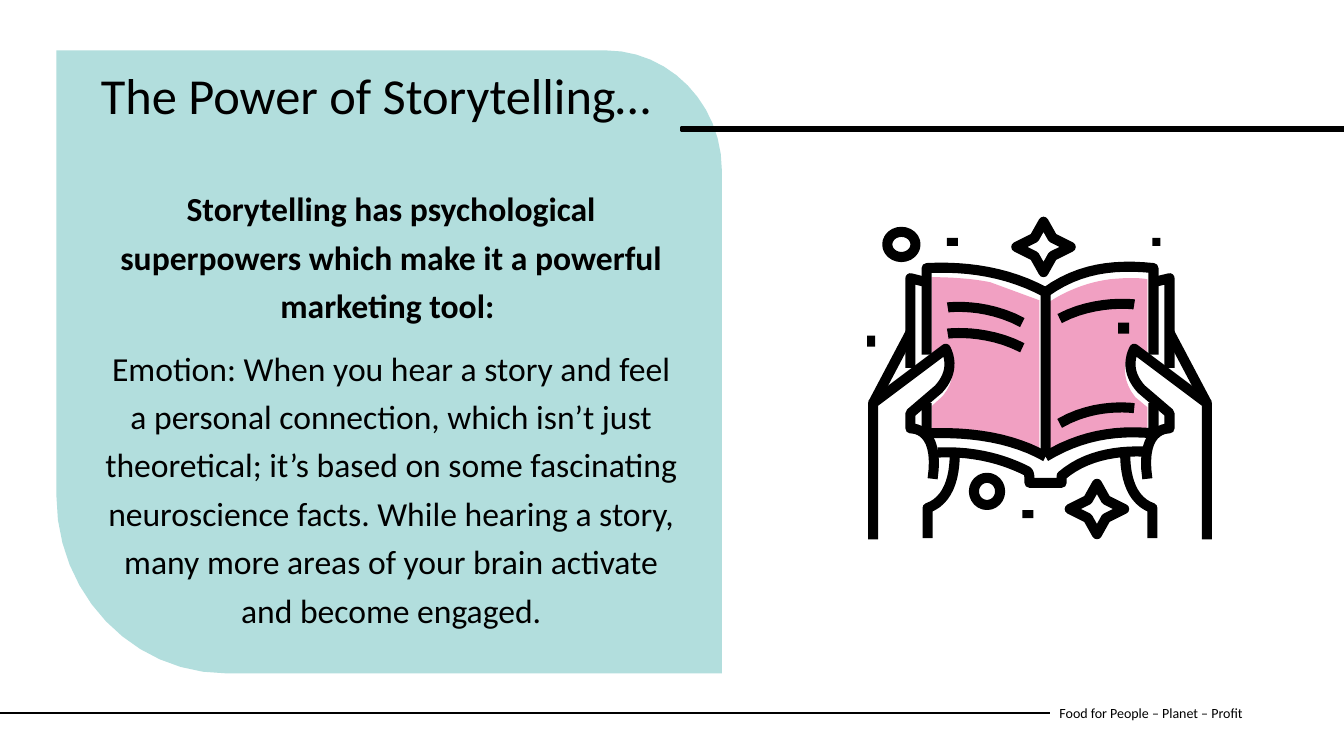
from collections import namedtuple
from dataclasses import dataclass

from lxml.etree import SubElement
from pptx import Presentation
from pptx.dml.color import RGBColor
from pptx.enum.shapes import MSO_CONNECTOR, MSO_SHAPE
from pptx.enum.text import MSO_ANCHOR, MSO_AUTO_SIZE, PP_ALIGN
from pptx.oxml.ns import qn
from pptx.util import Inches, Pt

Box = namedtuple("Box", "left top width height")


@dataclass(frozen=True)
class Theme:
    ink: RGBColor = RGBColor(0x00, 0x00, 0x00)
    panel: RGBColor = RGBColor(0xB2, 0xDE, 0xDD)
    page: RGBColor = RGBColor(0xF1, 0xA0, 0xC2)
    font: str = "Calibri"
    title_pt: int = 36
    body_pt: int = 24
    footer_pt: int = 10
    stroke_pt: float = 7.2


THEME = Theme()

TITLE = "The Power of Storytelling…"
LEAD = "Storytelling has psychological superpowers which make it a powerful marketing tool: "
EMOTION = (
    "Emotion: When you hear a story and feel a personal connection, which isn’t just "
    "theoretical; it’s based on some fascinating neuroscience facts. While hearing a story, "
    "many more areas of your brain activate and become engaged."
)
FOOTER = "Food for People – Planet – Profit"

# Outlines use M (move), L (line) and C (cubic curve), in inches from their box.
PANEL = "M 6.6 6.18 L 1.68 6.18 C .75 6.18 0 5.39 0 4.42 L 0 0 L 5.45 0 C 6.08 0 6.6 .53 6.6 1.19"
PAGES = [
    "M 1.71 .83 L 1.71 2.36 C 1.56 2.29 1.41 2.23 1.24 2.2 C 1.04 2.15 .79 2.14 .64 2.14 "
    "L .64 1.88 L .75 1.78 C .93 1.56 .82 1.34 .81 1.33 C .8 1.31 .76 1.29 .73 1.31 "
    "L .64 1.38 L .64 .6 C .79 .6 1.03 .61 1.22 .65",
    "M 1.8 .85 C 1.98 .73 2.19 .65 2.41 .62 C 2.53 .61 2.66 .6 2.78 .62 L 2.78 1.4 "
    "L 2.68 1.33 C 2.65 1.3 2.61 1.31 2.6 1.34 C 2.59 1.35 2.48 1.57 2.66 1.79 "
    "L 2.78 1.89 L 2.78 2.15 C 2.65 2.14 2.51 2.14 2.38 2.16 C 2.18 2.19 1.97 2.26 1.8 2.36",
]
HAND = (
    "M .06 3.2 L .06 1.85 L .78 1.31 C .85 1.45 .82 1.59 .71 1.71 L .43 1.95 L .43 2.1 "
    "C .55 2.1 .71 2.2 .65 2.6 M .06 1.85 L .43 1.15 M .59 .65 L .43 .61 L .43 1.5 "
    "M .6 3.19 L .6 2.89 C .8 2.82 .87 2.6 .87 2.35"
)
BOOK = (
    "M .59 1.37 L .59 .51 C 1 .49 1.4 .55 1.77 .75 L 1.77 2.38 "
    "M .59 1.85 L .59 2.15 C 1.05 2.13 1.45 2.2 1.77 2.38 "
    "M 2.84 1.37 L 2.84 .51 C 2.45 .47 2.1 .51 1.77 .75 "
    "M 2.84 1.85 L 2.84 2.15 C 2.45 2.11 2.1 2.18 1.77 2.38 "
    "M .7 2.34 C 1.1 2.32 1.4 2.43 1.58 2.52 C 1.61 2.54 1.61 2.56 1.61 2.64 "
    "L 1.93 2.64 L 1.93 2.57 C 2.15 2.38 2.45 2.32 2.74 2.33"
)
PAGE_LINES = [
    "M .8 .9 C .8 .9 1.17 .85 1.54 1.05",
    "M .8 1.16 C .8 1.16 1.17 1.11 1.54 1.3",
    "M 1.91 2.05 C 2.27 1.84 2.65 1.9 2.65 1.9",
    "M 1.91 1.01 C 2.27 .82 2.65 .87 2.65 .87",
]
STAR = "M 0 -.25 L .09 -.09 L .27 0 L .09 .09 L 0 .25 L -.09 .09 L -.27 0 L -.09 -.09"
STAR_CENTRES = [(1.75, 0.3), (2.28, 2.9)]
RINGS = [Box(0.2, 0.15, 0.28, 0.25), Box(1.06, 2.59, 0.26, 0.27)]
SPARKS = [
    Box(0.79, 0.21, 0.11, 0.08),
    Box(2.49, 1.05, 0.11, 0.11),
    Box(2.83, 0.21, 0.08, 0.08),
    Box(0, 1.18, 0.08, 0.11),
    Box(1.54, 2.91, 0.11, 0.08),
]


def curve_points(start, controls, steps=12):
    """Sample a cubic curve, leaving out its starting point."""
    weights = [((1 - t) ** 3, 3 * t * (1 - t) ** 2, 3 * t * t * (1 - t), t ** 3)
               for t in (i / steps for i in range(1, steps + 1))]
    ends = [start, *controls]
    return [tuple(sum(w * p[axis] for w, p in zip(row, ends)) for axis in (0, 1))
            for row in weights]


def contours(outline):
    """Turn an outline into lists of points, one for each move."""
    tokens = iter(outline.split())
    found = []
    for command in tokens:
        count = 3 if command == "C" else 1
        points = [(float(next(tokens)), float(next(tokens))) for _ in range(count)]
        if command == "M":
            found.append(points)
        else:
            found[-1] += curve_points(found[-1][-1], points) if command == "C" else points
    return found


def paint(shape, fill=None, stroke_pt=None):
    shape.shadow.inherit = False
    if fill is None:
        shape.fill.background()
    else:
        shape.fill.solid()
        shape.fill.fore_color.rgb = fill
    if stroke_pt is None:
        shape.line.fill.background()
    else:
        shape.line.color.rgb = THEME.ink
        shape.line.width = Pt(stroke_pt)


def add_outline(slide, outline, left, top, closed=True, mirror_width=None, **look):
    """Draw an outline from (left, top), flipped within mirror_width if given."""
    def place(point):
        x = point[0] if mirror_width is None else mirror_width - point[0]
        return Inches(left + x), Inches(top + point[1])

    builder = None
    for contour in contours(outline):
        start, *rest = map(place, contour)
        if builder is None:
            builder = slide.shapes.build_freeform(*start, scale=1.0)
        else:
            builder.move_to(*start)
        builder.add_line_segments(rest, close=closed)
    paint(builder.convert_to_shape(), **look)


def add_preset(slide, kind, box, **look):
    paint(slide.shapes.add_shape(kind, *map(Inches, box)), **look)


def format_paragraph(paragraph, size, bold=False, align=PP_ALIGN.LEFT, spacing=1.0, before=0):
    paragraph.alignment = align
    paragraph.line_spacing = spacing
    paragraph.space_before = Pt(before)
    for run in paragraph.runs:
        run.font.name, run.font.size, run.font.bold = THEME.font, Pt(size), bold
        run.font.color.rgb = THEME.ink


def set_frame(shape, anchor):
    frame = shape.text_frame
    frame.word_wrap = True
    frame.auto_size = MSO_AUTO_SIZE.NONE
    frame.vertical_anchor = anchor
    return frame


def add_footer(slide, box):
    middle = box.top + box.height / 2
    label_left = box.left + 10.41
    label = slide.shapes.add_textbox(*map(Inches, (label_left, box.top, 2.73, box.height)))
    frame = set_frame(label, MSO_ANCHOR.MIDDLE)
    frame.text = FOOTER
    format_paragraph(frame.paragraphs[0], THEME.footer_pt)
    rule = slide.shapes.add_connector(
        MSO_CONNECTOR.STRAIGHT, *map(Inches, (box.left, middle, label_left, middle)))
    rule.line.color.rgb = THEME.ink
    rule.line.width = Pt(1.5)
    SubElement(rule.element.spPr, qn("a:effectLst"))


def add_story_panel(slide, box):
    add_outline(slide, PANEL, box.left, box.top, fill=THEME.panel)
    add_preset(slide, MSO_SHAPE.RECTANGLE, Box(box.left + 6.2, box.top + 0.76, 6.57, 0.04),
               fill=THEME.ink, stroke_pt=1.93)

    text_left, text_width = box.left + 0.34, 5.96
    story = slide.shapes.add_textbox(
        *map(Inches, (text_left, box.top + 1.24, text_width, 4.4)))
    frame = set_frame(story, MSO_ANCHOR.TOP)
    frame.text = f"{LEAD}\n{EMOTION}"
    for paragraph, bold in zip(frame.paragraphs, (True, False)):
        format_paragraph(paragraph, THEME.body_pt, bold, PP_ALIGN.CENTER, 1.2, 10)

    title = slide.shapes.title
    title.left, title.top, title.width, title.height = map(
        Inches, (text_left, box.top + 0.15, text_width, 1.09))
    frame = set_frame(title, MSO_ANCHOR.TOP)
    frame.text = TITLE
    format_paragraph(frame.paragraphs[0], THEME.title_pt, spacing=0.9, before=10)
    title.element.getparent().append(title.element)  # in front of the panel


def add_book_icon(slide, box):
    """Draw two hands holding an open book among sparks, rings and stars."""
    stroke = {"stroke_pt": THEME.stroke_pt}
    for page in PAGES:
        add_outline(slide, page, box.left, box.top, fill=THEME.page)
    for mirror_width in (None, box.width):
        add_outline(slide, HAND, box.left, box.top, False, mirror_width, **stroke)
    for strokes in (BOOK, *PAGE_LINES):
        add_outline(slide, strokes, box.left, box.top, False, **stroke)
    for x, y in STAR_CENTRES:
        add_outline(slide, STAR, box.left + x, box.top + y, **stroke)
    for kind, parts, look in ((MSO_SHAPE.OVAL, RINGS, stroke),
                              (MSO_SHAPE.RECTANGLE, SPARKS, {"fill": THEME.ink})):
        for part in parts:
            place = part._replace(left=box.left + part.left, top=box.top + part.top)
            add_preset(slide, kind, place, **look)


def main():
    deck = Presentation()
    deck.slide_width, deck.slide_height = Inches(13.33), Inches(7.5)
    slide = deck.slides.add_slide(deck.slide_layouts.get_by_name("Title Only"))
    add_footer(slide, Box(0, 6.87, 13.33, 0.4))
    add_story_panel(slide, Box(0.56, 0.5, 6.6, 6.18))
    add_book_icon(slide, Box(8.6, 2.15, 3.43, 3.2))
    deck.save("out.pptx")


if __name__ == "__main__":
    main()
